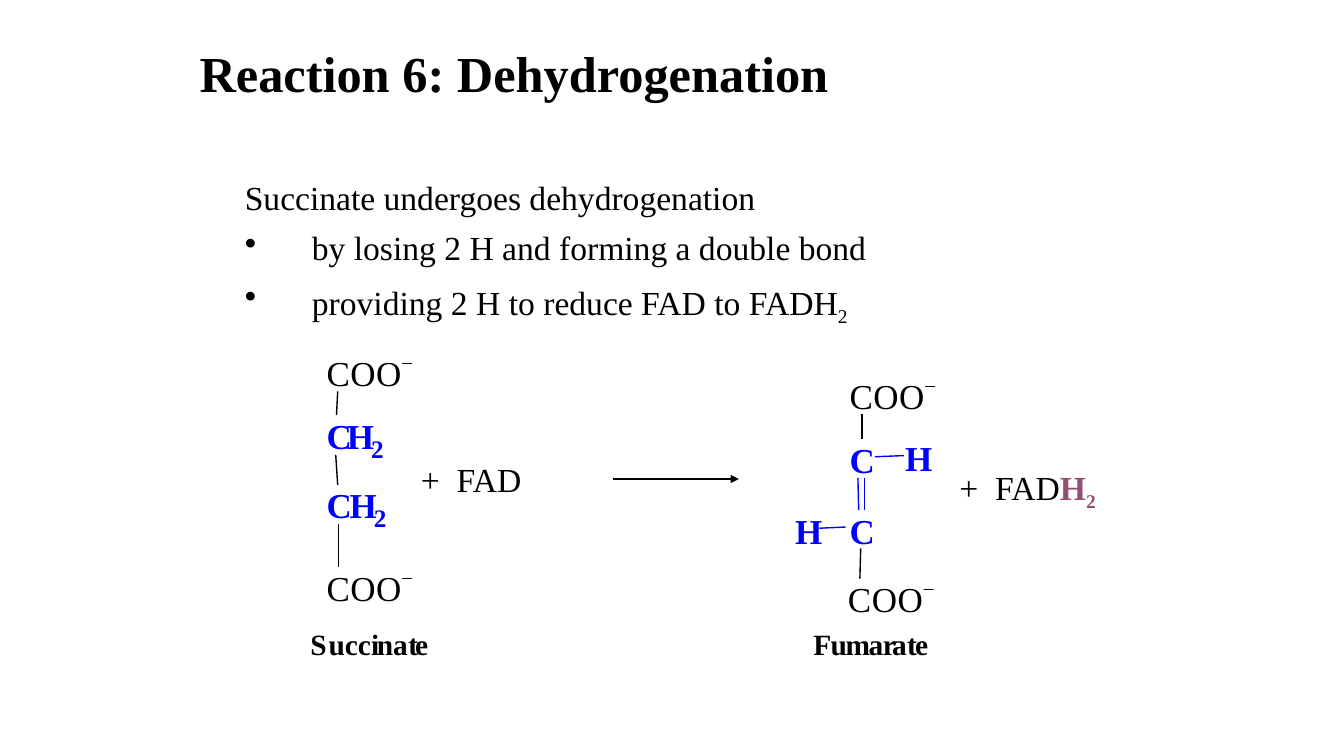
from dataclasses import dataclass

import pptx
import pptx.dml.color
import pptx.enum.shapes
import pptx.enum.text
import pptx.util
from pptx.oxml.xmlchemy import OxmlElement
from pptx.util import Cm, Pt

FONT = "Times New Roman"
COLORS = {"ink": "000000", "changed": "0000FF", "hydrogen": "954F72"}
ATOM_SIZE, INDEX_SIZE, NAME_SIZE, CHARGE_SIZE = 25, 18, 21, 24
# Letter widths as a share of the type size
ADVANCE = {"C": 0.7, "O": 0.72, "H": 0.78, "2": 0.5, "–": 0.33, "F": 0.61,
           "S": 0.56, "u": 0.56, "m": 0.83, "a": 0.5, "r": 0.44, "t": 0.33,
           "e": 0.44, "c": 0.44, "i": 0.28, "n": 0.56}


@dataclass(frozen=True)
class Lettering:
    """Letters set one by one on a shared top edge, in centimetres."""
    text: str
    lefts: tuple[float, ...]
    top: float
    size: int = ATOM_SIZE
    color: str = "ink"
    bold: bool = False
    baseline: int = 0


@dataclass(frozen=True)
class Bond:
    x1: float
    y1: float
    x2: float
    y2: float
    color: str = "ink"


@dataclass(frozen=True)
class Part:
    """A stretch of text with one format."""
    text: str
    color: str = "ink"
    bold: bool = False
    baseline: int = 0


def carboxylate(left: float, top: float) -> list[Lettering]:
    return [Lettering("COO", (left, left + 0.6, left + 1.25), top),
            Lettering("–", (left + 1.91,), top - 0.17, CHARGE_SIZE, baseline=30)]


def changed_atoms(text: str, lefts: tuple[float, ...], top: float,
                  size: int = ATOM_SIZE) -> Lettering:
    return Lettering(text, lefts, top, size, "changed", True)


def methylene(left: float, hydrogen_left: float, top: float) -> list[Lettering]:
    return [changed_atoms("CH", (left, hydrogen_left), top),
            changed_atoms("2", (hydrogen_left + 0.61,), top + 0.48, INDEX_SIZE)]


def compound_name(text: str, lefts: tuple[float, ...]) -> Lettering:
    return Lettering(text, lefts, 15.77, NAME_SIZE, bold=True)


SUCCINATE = [
    *carboxylate(8.23, 8.86),
    *methylene(8.23, 8.74, 10.44),
    *methylene(8.23, 8.81, 12.19),
    *carboxylate(8.23, 14.27),
    compound_name("Succinate", (7.82, 8.28, 8.69, 9.02, 9.35, 9.5, 9.91, 10.29, 10.46)),
]
FUMARATE = [
    *carboxylate(21.41, 9.45),
    changed_atoms("C", (21.41,), 11.05),
    changed_atoms("H", (22.81,), 11),
    changed_atoms("HC", (20.04, 21.41), 12.83),
    *carboxylate(21.37, 14.55),
    compound_name("Fumarate", (20.5, 20.93, 21.31, 21.89, 22.25, 22.48, 22.86, 23.06)),
]
BONDS = [
    Bond(8.53, 13.21, 8.53, 14.3),
    Bond(8.46, 11.46, 8.51, 12.22),
    Bond(8.48, 10.46, 8.51, 9.86),
    Bond(21.79, 12.04, 21.79, 12.85, "changed"),
    Bond(21.62, 12.04, 21.64, 12.85, "changed"),
    Bond(21.69, 13.82, 21.67, 14.58),
    Bond(21.72, 11.07, 21.72, 10.44),
    Bond(21.31, 13.28, 20.65, 13.31, "changed"),
    Bond(22.05, 11.51, 22.78, 11.48, "changed"),
]


def rgb(color: str) -> pptx.dml.color.RGBColor:
    return pptx.dml.color.RGBColor.from_string(COLORS[color])


def format_run(run, size: float, color: str, bold: bool, baseline: int) -> None:
    run.font.name = FONT
    run.font.size = Pt(size)
    run.font.bold = bold
    run.font.color.rgb = rgb(color)
    if baseline:
        run.font._element.set("baseline", str(baseline * 1000))


def add_parts(paragraph, parts: list[Part], size: float) -> None:
    for part in parts:
        run = paragraph.add_run()
        run.text = part.text
        format_run(run, size, part.color, part.bold, part.baseline)


def add_frame(slide, left: float, top: float, width: float, height: float):
    """Add a wrapping text box and return its text frame."""
    frame = slide.shapes.add_textbox(Cm(left), Cm(top), Cm(width), Cm(height)).text_frame
    frame.word_wrap = True
    return frame


def set_hanging_bullet(paragraph, bullet: str) -> None:
    properties = paragraph._p.get_or_add_pPr()
    properties.set("marL", str(Cm(1.69)))
    properties.set("indent", str(-Cm(1.69)))
    if bullet:
        mark = OxmlElement("a:buChar")
        mark.set("char", bullet)
        properties.append(mark)


def draw_lettering(slide, lettering: Lettering) -> None:
    size = lettering.size
    for letter, left in zip(lettering.text, lettering.lefts):
        box = slide.shapes.add_textbox(Cm(left), Cm(lettering.top),
                                       Pt(size * ADVANCE[letter]), Pt(size * 1.2))
        frame = box.text_frame
        frame.margin_left = frame.margin_right = frame.margin_top = frame.margin_bottom = 0
        frame.word_wrap = False
        frame.auto_size = pptx.enum.text.MSO_AUTO_SIZE.SHAPE_TO_FIT_TEXT
        frame.text = letter
        format_run(frame.paragraphs[0].runs[0], size, lettering.color,
                   lettering.bold, lettering.baseline)


def draw_line(slide, bond: Bond, width: float = 1, arrow: bool = False) -> None:
    connector = slide.shapes.add_connector(
        pptx.enum.shapes.MSO_CONNECTOR.STRAIGHT,
        Cm(bond.x1), Cm(bond.y1), Cm(bond.x2), Cm(bond.y2))
    connector.line.color.rgb = rgb(bond.color)
    connector.line.width = Pt(width)
    if arrow:
        head = OxmlElement("a:tailEnd")
        head.set("type", "triangle")
        connector.line._get_or_add_ln().append(head)
    connector._element.spPr.append(OxmlElement("a:effectLst"))


def draw_title(slide) -> None:
    frame = add_frame(slide, 4.78, 0.64, 22.28, 2.54)
    frame.vertical_anchor = pptx.enum.text.MSO_ANCHOR.MIDDLE
    frame.paragraphs[0].line_spacing = 0.9
    add_parts(frame.paragraphs[0], [Part("Reaction 6: Dehydrogenation", bold=True)], 36)


def draw_explanation(slide) -> None:
    statements = [
        ("", [Part("Succinate undergoes dehydrogenation")]),
        ("•", [Part("by losing 2 H and forming a double bond")]),
        ("•", [Part("providing 2 H to reduce FAD to FADH"), Part("2", baseline=-25)]),
    ]
    frame = add_frame(slide, 5.92, 4.45, 21.39, 12.27)
    for index, (bullet, parts) in enumerate(statements):
        paragraph = frame.add_paragraph() if index else frame.paragraphs[0]
        paragraph.line_spacing = 0.9
        paragraph.space_before = Pt(10)
        set_hanging_bullet(paragraph, bullet)
        add_parts(paragraph, parts, 24)


def draw_coenzymes(slide) -> None:
    fad = Part("+\u00a0 FAD".replace("\u00a0", " "))
    reduced = [fad, Part("H", "hydrogen", True), Part("2", "hydrogen", True, -25)]
    for left, top, width, parts in [(10.36, 11.43, 3.61, [fad]),
                                    (23.93, 11.63, 4.65, reduced)]:
        add_parts(add_frame(slide, left, top, width, 1.27).paragraphs[0], parts, 24)


def main() -> None:
    presentation = pptx.Presentation()
    presentation.slide_width, presentation.slide_height = Cm(33.87), Cm(19.05)
    slide = presentation.slides.add_slide(presentation.slide_layouts[6])
    draw_title(slide)
    draw_explanation(slide)
    draw_coenzymes(slide)
    draw_line(slide, Bond(15.44, 12.07, 18.62, 12.07), 0.75, arrow=True)
    for bond in BONDS:
        draw_line(slide, bond)
    for lettering in SUCCINATE + FUMARATE:
        draw_lettering(slide, lettering)
    presentation.save("out.pptx")


if __name__ == "__main__":
    main()
